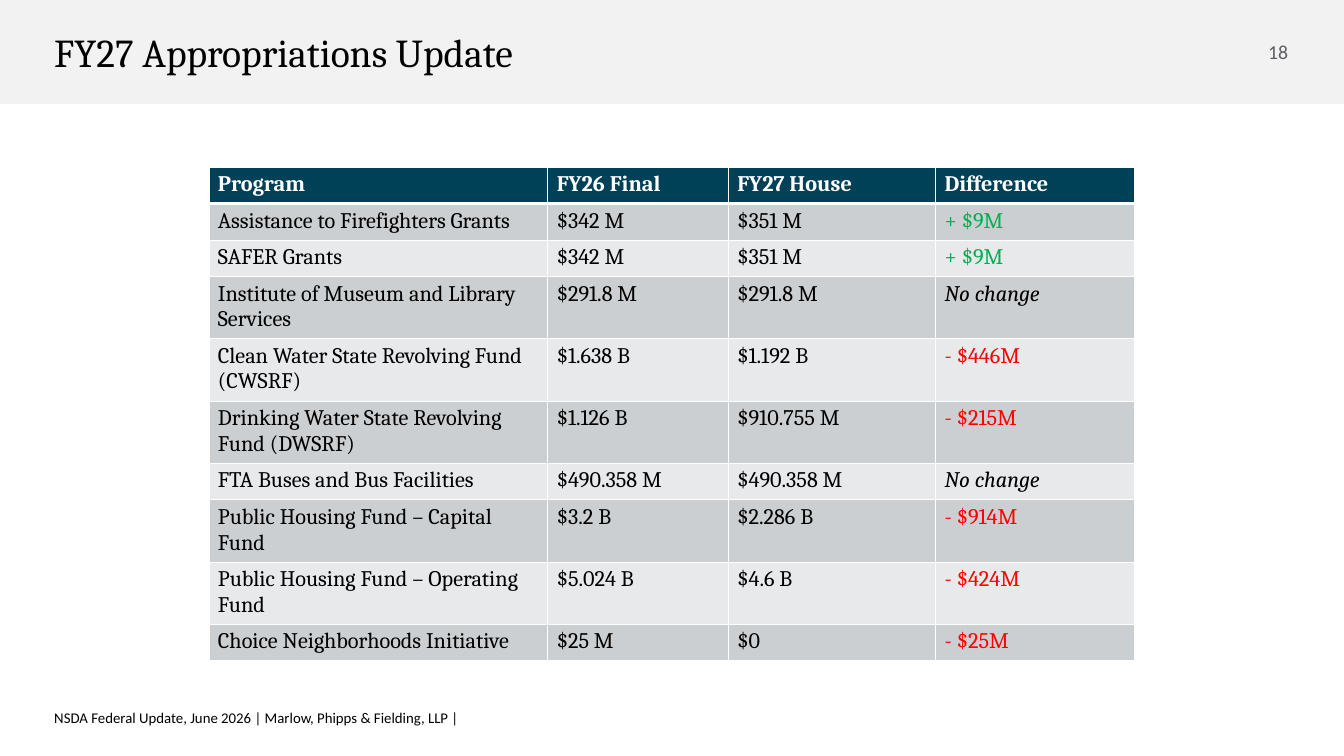
from dataclasses import dataclass
from pptx import Presentation
from pptx.dml.color import RGBColor as RGB
from pptx.enum.shapes import MSO_SHAPE as SHAPE
from pptx.enum.text import MSO_ANCHOR as ANCHOR, PP_ALIGN as ALIGN
from pptx.oxml import parse_xml
from pptx.oxml.ns import nsdecls
from pptx.util import Inches, Pt


@dataclass(frozen=True)
class Theme:
    serif: str = "Cambria"
    sans: str = "Calibri"
    title: int = 32
    body: int = 18
    number: int = 16
    footer: int = 12
    black: str = "000000"
    white: str = "FFFFFF"
    gray: str = "5C5E66"
    band: str = "F2F2F2"
    header: str = "004157"
    stripes: tuple = ("CCCFD1", "E7E9EA")
    gain: str = "00B050"
    loss: str = "FF0000"


T = Theme()
COLS, ROWS = 151.1, 85
CELL = Inches(0.1)
HEADER_BOX = (0, 0, COLS, 11.7)
TABLE_BOX = (23.5, 18.8, 104.1, 41)
FOOTER_BOX = (5, 79.6, 126.4, 2.5)
COLUMN_SPANS = (38.1, 20.3, 23.3, 22.4)

PROGRAMS = [
    ("Program", "FY26 Final", "FY27 House", "Difference"),
    ("Assistance to Firefighters Grants", "$342 M", "$351 M", "+ $9M"),
    ("SAFER Grants", "$342 M", "$351 M", "+ $9M"),
    ("Institute of Museum and Library Services", "$291.8 M", "$291.8 M", "No change"),
    ("Clean Water State Revolving Fund (CWSRF)", "$1.638 B", "$1.192 B", "- $446M"),
    ("Drinking Water State Revolving Fund (DWSRF)", "$1.126 B", "$910.755 M", "- $215M"),
    ("FTA Buses and Bus Facilities", "$490.358 M", "$490.358 M", "No change"),
    ("Public Housing Fund – Capital Fund", "$3.2 B", "$2.286 B", "- $914M"),
    ("Public Housing Fund – Operating Fund", "$5.024 B", "$4.6 B", "- $424M"),
    ("Choice Neighborhoods Initiative", "$25 M", "$0", "- $25M"),
]


def grid(*spans):
    return [round(span * CELL) for span in spans]


def add_run(p, text, font, size, color, bold=False, italic=False):
    r = p.add_run()
    r.text = text
    r.font.name, r.font.size = font, Pt(size)
    r.font.color.rgb = RGB.from_string(color)
    r.font.bold, r.font.italic = bold, italic


def add_text(s, box, text, font, size, color, inset=(0, 0), wrap=True):
    tf = s.shapes.add_textbox(*grid(*box)).text_frame
    tf.word_wrap = wrap
    tf.vertical_anchor = ANCHOR.MIDDLE
    tf.margin_left = tf.margin_right = Inches(inset[0])
    tf.margin_top = tf.margin_bottom = Inches(inset[1])
    p = tf.paragraphs[0]
    add_run(p, text, font, size, color)
    return p


def add_header(s, box, title, number):
    x, y, w, h = box
    sp = s.shapes.add_shape(SHAPE.RECTANGLE, *grid(*box))
    sp.shadow.inherit = False
    sp.fill.solid()
    sp.fill.fore_color.rgb = RGB.from_string(T.band)
    sp.line.fill.background()
    line_h = 6.5
    top = y + (h - line_h) / 2
    p = add_text(s, (x + w - 9.9, top, 5, line_h), number, T.sans, T.number, T.gray, wrap=False)
    p.alignment = ALIGN.CENTER
    add_text(s, (x + 5, top, w - 15.9, line_h), title, T.serif, T.title, T.black, (0.11, 0.06))


def set_borders(cell, **widths):
    tcPr = cell._tc.get_or_add_tcPr()
    for side in "LRTB":
        tcPr.append(parse_xml(
            f'<a:ln{side} {nsdecls("a")} w="{Pt(widths.get(side, 1))}"><a:solidFill>'
            f'<a:srgbClr val="{T.white}"/></a:solidFill></a:ln{side}>'))


def text_color(text, is_header):
    if is_header:
        return T.white
    return {"+": T.gain, "-": T.loss}.get(text[0], T.black)


def add_program_table(s, box, rows):
    table = s.shapes.add_table(len(rows), len(COLUMN_SPANS), *grid(*box)).table
    for column, width in zip(table.columns, grid(*COLUMN_SPANS)):
        column.width = width
    for i, row in enumerate(rows):
        is_header = i == 0
        table.rows[i].height = round(box[3] * CELL / len(rows))
        for j, text in enumerate(row):
            cell = table.cell(i, j)
            set_borders(cell, **{0: {"B": 3}, 1: {"T": 3}}.get(i, {}))
            cell.fill.solid()
            fill = T.header if is_header else T.stripes[(i - 1) % 2]
            cell.fill.fore_color.rgb = RGB.from_string(fill)
            add_run(cell.text_frame.paragraphs[0], text, T.serif, T.body,
                    text_color(text, is_header), is_header, text == "No change")


def add_footer(s, box, text):
    p = add_text(s, box, text, T.sans, T.footer, T.black, (0.11, 0))
    p.line_spacing = 0.8


def main():
    prs = Presentation()
    prs.slide_width, prs.slide_height = grid(COLS, ROWS)
    s = prs.slides.add_slide(prs.slide_layouts[6])
    add_header(s, HEADER_BOX, "FY27 Appropriations Update", "18")
    add_program_table(s, TABLE_BOX, PROGRAMS)
    add_footer(s, FOOTER_BOX, "NSDA Federal Update, June 2026 | Marlow, Phipps & Fielding, LLP |")
    prs.save("out.pptx")


if __name__ == "__main__":
    main()
